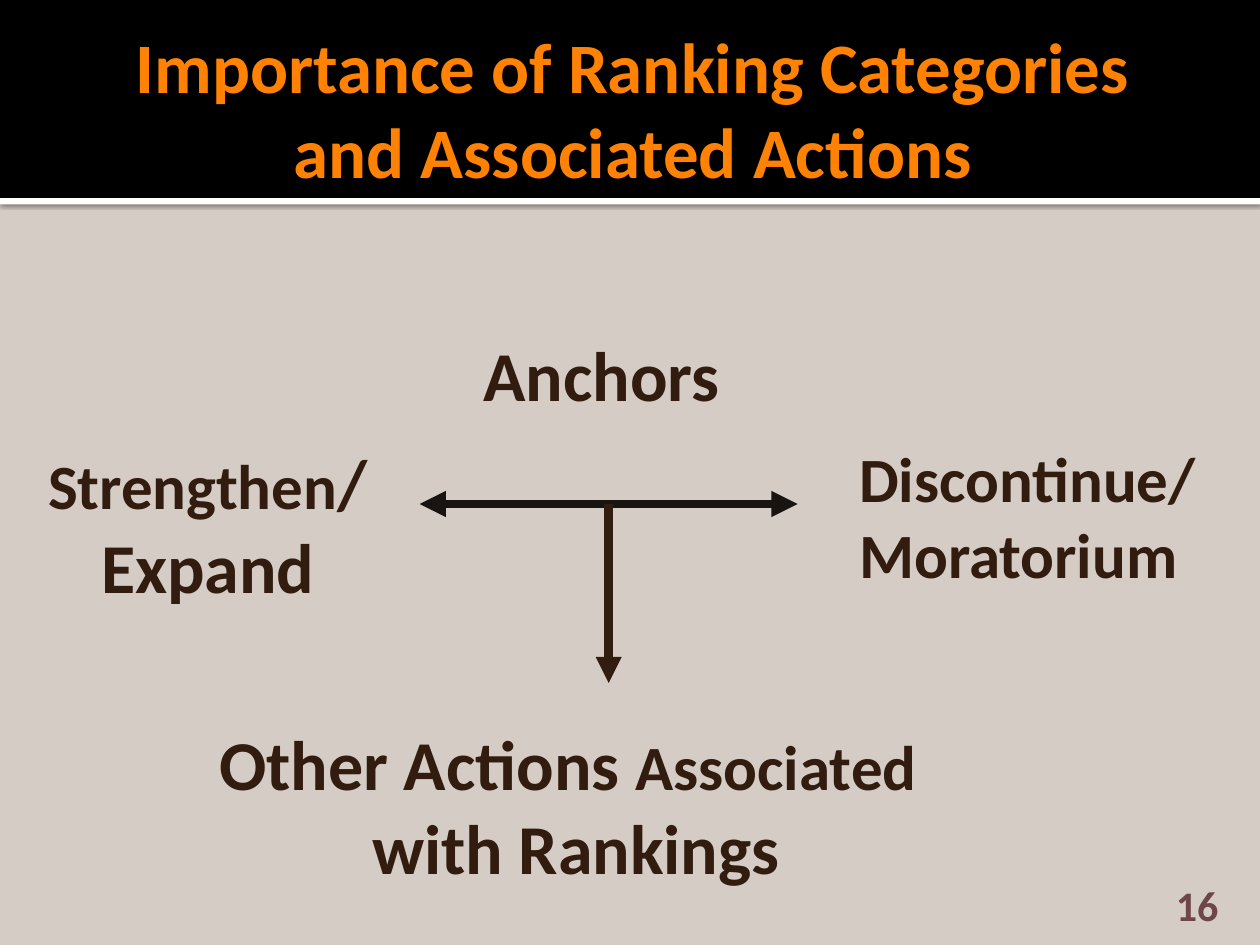
"""Build the slide on ranking categories and their associated actions."""
import dataclasses
import typing

import lxml.etree
import pptx
import pptx.dml.color
import pptx.enum.shapes
import pptx.enum.text
import pptx.oxml
import pptx.oxml.ns
import pptx.util

Cm = pptx.util.Cm
Align = pptx.enum.text.PP_ALIGN
Anchor = pptx.enum.text.MSO_ANCHOR
AutoSize = pptx.enum.text.MSO_AUTO_SIZE

COLORS = {
    "background": "D5CDC5",
    "band": "000000",
    "strip": "FFFFFF",
    "title": "FF8205",
    "body": "311C0F",
    "axis": "181411",
    "number": "6E4549",
}
FONT = "Calibri"
LARGE, MEDIUM = 40, 36
SLIDE_WIDTH, SLIDE_HEIGHT = 25.4, 19.05
BAND_HEIGHT = 3.99
AXIS_LEFT, AXIS_RIGHT, AXIS_TOP = 8.46, 16.08, 10.16
AXIS_MIDDLE = (AXIS_LEFT + AXIS_RIGHT) / 2


class Box(typing.NamedTuple):
    left: float
    top: float
    width: float
    height: float

    def lengths(self) -> list:
        return [Cm(value) for value in self]


class Run(typing.NamedTuple):
    text: str
    size: float


@dataclasses.dataclass
class Line:
    runs: list[Run]
    alignment: typing.Any = Align.LEFT


@dataclasses.dataclass
class Label:
    box: Box
    lines: list[Line]
    color: str = "body"
    frame_format: dict = dataclasses.field(
        default_factory=lambda: {"word_wrap": False, "auto_size": AutoSize.SHAPE_TO_FIT_TEXT}
    )


@dataclasses.dataclass
class Arrow:
    start: tuple[float, float]
    end: tuple[float, float]
    color: str
    heads: tuple[str, ...]


TITLE = Label(
    Box(1.27, 0.43, 22.86, 3.48),
    [Line([Run("Importance of Ranking Categories and Associated Actions", 40.5)], Align.CENTER)],
    "title",
    {
        "word_wrap": True,
        "auto_size": AutoSize.NONE,
        "vertical_anchor": Anchor.MIDDLE,
        "margin_left": Cm(0.25),
        "margin_right": Cm(0.13),
        "margin_top": Cm(0.13),
        "margin_bottom": Cm(0.13),
    },
)
LABELS = [
    Label(Box(9.5, 6.55, 5.56, 1.96), [Line([Run("Anchors", LARGE)])]),
    Label(
        Box(0.56, 8.74, 7.26, 3.68),
        [
            Line([Run("Strengthen", MEDIUM), Run("/", LARGE)], Align.CENTER),
            Line([Run("Expand", LARGE)], Align.CENTER),
        ],
    ),
    Label(
        Box(17.07, 8.74, 7.49, 3.33),
        [Line([Run("Discontinue/", MEDIUM)]), Line([Run("Moratorium", MEDIUM)])],
    ),
    Label(
        Box(4.17, 14.4, 16.23, 3.68),
        [
            Line([Run("Other Actions ", LARGE), Run("Associated", MEDIUM), Run(" ", LARGE)]),
            Line([Run("with Rankings", LARGE)], Align.CENTER),
        ],
    ),
    Label(
        Box(22.78, 17.98, 2.03, 0.76),
        [Line([Run("16", 24)], Align.RIGHT)],
        "number",
        {"word_wrap": True, "vertical_anchor": Anchor.BOTTOM, "margin_bottom": 0},
    ),
]
ARROWS = [
    Arrow((AXIS_LEFT, AXIS_TOP), (AXIS_RIGHT, AXIS_TOP), "axis", ("headEnd", "tailEnd")),
    Arrow((AXIS_MIDDLE, AXIS_TOP), (AXIS_MIDDLE, 13.77), "body", ("tailEnd",)),
]


def rgb(name: str) -> pptx.dml.color.RGBColor:
    return pptx.dml.color.RGBColor.from_string(COLORS[name])


def apply_format(target: typing.Any, values: dict) -> None:
    for name, value in values.items():
        setattr(target, name, value)


def write_label(shape: typing.Any, label: Label) -> None:
    frame = shape.text_frame
    apply_format(frame, label.frame_format)
    for index, line in enumerate(label.lines):
        paragraph = frame.add_paragraph() if index else frame.paragraphs[0]
        paragraph.alignment = line.alignment
        for part in line.runs:
            run = paragraph.add_run()
            run.text = part.text
            values = {"name": FONT, "size": pptx.util.Pt(part.size), "bold": True}
            apply_format(run.font, values)
            run.font.color.rgb = rgb(label.color)


def draw_band(slide: typing.Any, box: Box, color: str) -> typing.Any:
    kind = pptx.enum.shapes.MSO_SHAPE.RECTANGLE
    shape = slide.shapes.add_shape(kind, *box.lengths())
    shape.shadow.inherit = False
    shape.fill.solid()
    shape.fill.fore_color.rgb = rgb(color)
    shape.line.fill.background()
    return shape


def add_shadow(shape: typing.Any) -> None:
    effects = shape.element.spPr.find(pptx.oxml.ns.qn("a:effectLst"))
    effects.append(pptx.oxml.parse_xml(
        f'<a:outerShdw {pptx.oxml.ns.nsdecls("a")} blurRad="31750" dist="10160" '
        'dir="5400000" algn="tl" rotWithShape="0">'
        '<a:srgbClr val="000000"><a:alpha val="60000"/></a:srgbClr></a:outerShdw>'
    ))


def draw_arrow(slide: typing.Any, arrow: Arrow) -> None:
    ends = [Cm(value) for value in arrow.start + arrow.end]
    connector = slide.shapes.add_connector(pptx.enum.shapes.MSO_CONNECTOR.STRAIGHT, *ends)
    connector.line.width = pptx.util.Pt(5)
    connector.line.color.rgb = rgb(arrow.color)
    properties = connector.element.spPr
    outline = properties.find(pptx.oxml.ns.qn("a:ln"))
    for head in arrow.heads:
        lxml.etree.SubElement(outline, pptx.oxml.ns.qn(f"a:{head}"), type="triangle")
    lxml.etree.SubElement(properties, pptx.oxml.ns.qn("a:effectLst"))


def main() -> None:
    presentation = pptx.Presentation()
    size = {"slide_width": Cm(SLIDE_WIDTH), "slide_height": Cm(SLIDE_HEIGHT)}
    apply_format(presentation, size)
    slide = presentation.slides.add_slide(presentation.slide_layouts[5])
    slide.background.fill.solid()
    slide.background.fill.fore_color.rgb = rgb("background")

    add_shadow(draw_band(slide, Box(0, BAND_HEIGHT, SLIDE_WIDTH, 0.13), "strip"))
    draw_band(slide, Box(0, 0, SLIDE_WIDTH, BAND_HEIGHT), "band")

    title = slide.shapes.title
    title.element.getparent().append(title.element)
    apply_format(title, dict(zip(Box._fields, TITLE.box.lengths())))
    write_label(title, TITLE)

    for label in LABELS:
        write_label(slide.shapes.add_textbox(*label.box.lengths()), label)
    for arrow in ARROWS:
        draw_arrow(slide, arrow)
    presentation.save("out.pptx")


if __name__ == "__main__":
    main()
